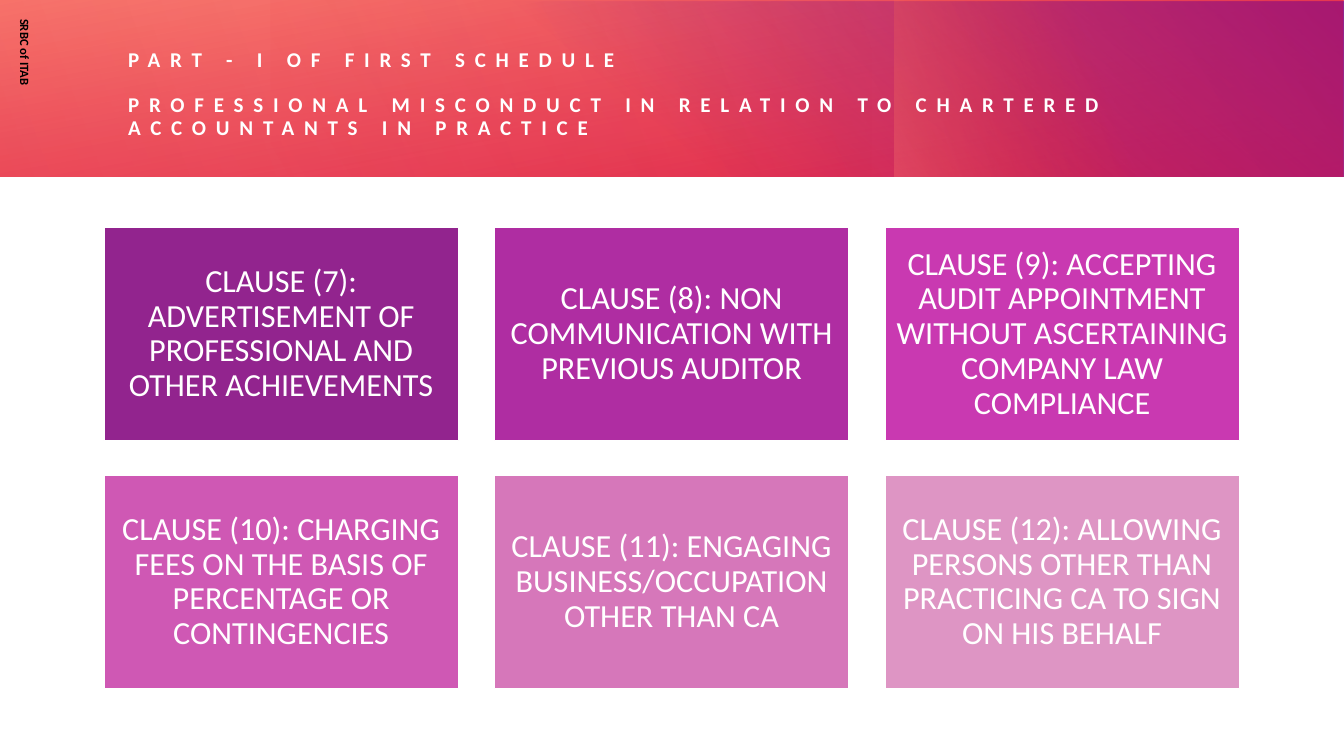
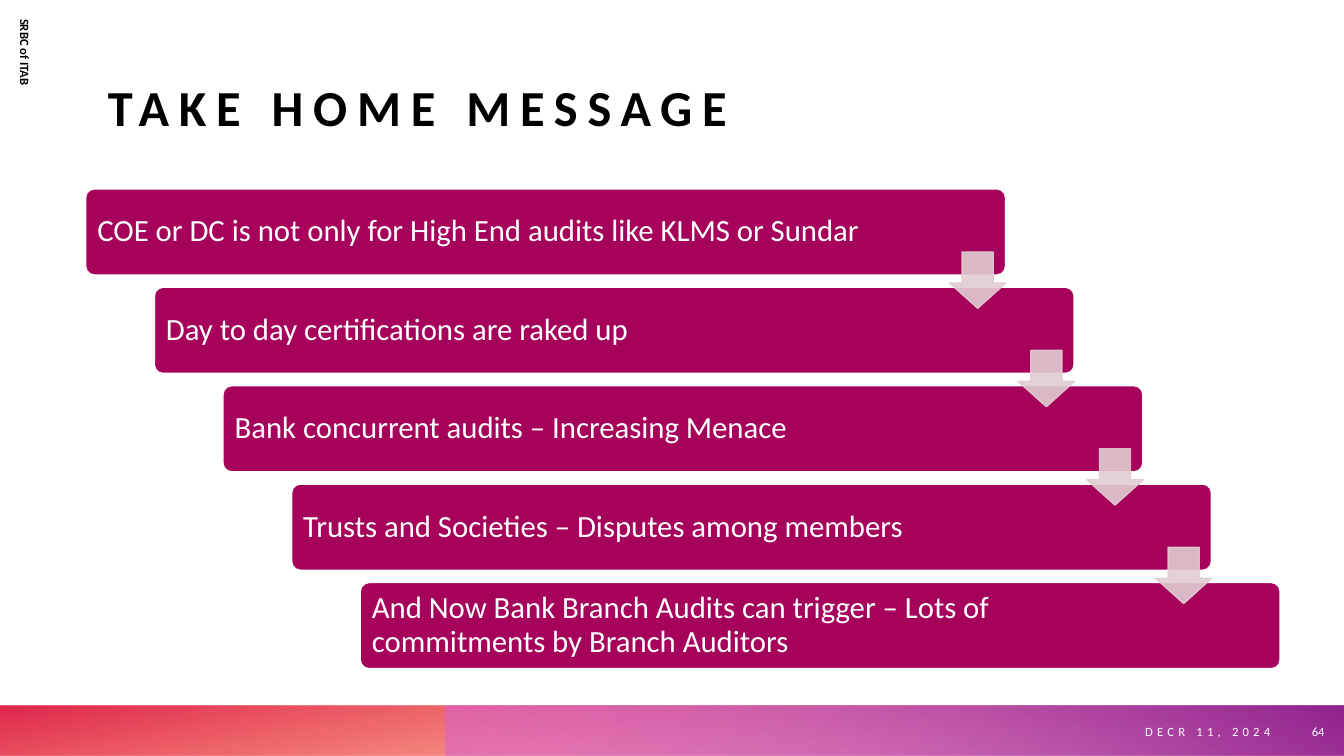
import pptx
import pptx.util
import pptx.dml.color
import pptx.enum.shapes
import pptx.enum.text
import pptx.oxml
import pptx.oxml.ns
import lxml.etree

Cm = pptx.util.Cm
Pt = pptx.util.Pt
qn = pptx.oxml.ns.qn
SHAPE = pptx.enum.shapes.MSO_SHAPE
ALIGN = pptx.enum.text.PP_ALIGN
ANCHOR = pptx.enum.text.MSO_ANCHOR

FONT = "Calibri"
C = {
    "white": "FFFFFF", "black": "000000", "red": "DA002F", "orange": "FE4A00",
    "salmon": "FF907A", "orchid": "D861D4", "purple": "92248E",
    "bar": "A6025C", "arrow": "E1CCD2",
}
WIDTH, HEIGHT = 33.87, 19.05

SIDE_LABEL = "SRBC of ITAB"
CLAUSE_TITLE = [
    "PART - I OF FIRST SCHEDULE",
    "PROFESSIONAL MISCONDUCT IN RELATION TO CHARTERED ACCOUNTANTS IN PRACTICE",
]
CLAUSES = [
    ("CLAUSE (7): ADVERTISEMENT OF PROFESSIONAL AND OTHER ACHIEVEMENTS", "92248E"),
    ("CLAUSE (8): NON COMMUNICATION WITH PREVIOUS AUDITOR", "AF2DA2"),
    ("CLAUSE (9): ACCEPTING AUDIT APPOINTMENT WITHOUT ASCERTAINING COMPANY LAW COMPLIANCE", "C939B1"),
    ("CLAUSE (10): CHARGING FEES ON THE BASIS OF PERCENTAGE OR CONTINGENCIES", "CF58B4"),
    ("CLAUSE (11): ENGAGING BUSINESS/OCCUPATION OTHER THAN CA", "D677BA"),
    ("CLAUSE (12): ALLOWING PERSONS OTHER THAN PRACTICING CA TO SIGN ON HIS BEHALF", "DE95C4"),
]
MESSAGE_TITLE = "TAKE HOME MESSAGE"
MESSAGES = [
    "COE or DC is not only for High End audits like KLMS or Sundar",
    "Day to day certifications are raked up",
    "Bank concurrent audits – Increasing Menace",
    "Trusts and Societies – Disputes among members",
    "And Now Bank Branch Audits can trigger – Lots of commitments by Branch Auditors",
]
DATE, PAGE = "DECR 11, 2024", "64"

HEADER_BANDS = [
    ((0, 0, WIDTH, 4.44), 260, [(0, "red", 83), (100, "salmon", 100)]),
    ((12.22, 0.03, 21.65, 4.42), 310, [(22, "purple", 0), (99, "purple", 100)]),
    ((22.54, 0, 9.5, 4.45), 160, [(45, "orange", 0), (99, "salmon", 33)]),
    ((6.81, 0, 27.03, 4.45), 150, [(0, "red", 30), (99, "red", 0)]),
    ((0, 0, 21.97, 4.45), 340, [(0, "red", 21), (99, "red", 0)]),
]
FOOTER_BANDS = [
    ((0, 17.78, WIDTH, 1.27), 260, [(14, "orange", 28), (100, "red", 85)]),
    ((11.23, 17.78, 22.64, 1.27), 300, [(9, "orchid", 55), (99, "purple", 100)]),
]


def rgb(value):
    return pptx.dml.color.RGBColor.from_string(value)


def write(sp, text, size=9, color="white", bold=False, align=ALIGN.LEFT,
          anchor=ANCHOR.MIDDLE, insets=(0.25, 0.13, 0.25, 0.13),
          line=1.0, gap=0, tracking=0):
    tf = sp.text_frame
    tf.word_wrap = True
    tf.vertical_anchor = anchor
    tf.margin_left, tf.margin_top, tf.margin_right, tf.margin_bottom = map(Cm, insets)
    for i, content in enumerate([text] if isinstance(text, str) else text):
        p = tf.add_paragraph() if i else tf.paragraphs[0]
        p.alignment = align
        p.line_spacing = line
        p.space_before = Pt(gap if i else 0)
        r = p.add_run()
        r.text = content
        r.font.name = FONT
        r.font.size = Pt(size)
        r.font.bold = bold
        r.font.color.rgb = rgb(C[color])
    if tracking:
        for props in sp.element.iter(qn("a:rPr")):
            props.set("spc", str(tracking * 100))


def add_text(s, box, text, **fmt):
    sp = s.shapes.add_textbox(*map(Cm, box))
    write(sp, text, **fmt)
    return sp


def add_block(s, kind, box, fill, outline="FFFFFF"):
    sp = s.shapes.add_shape(kind, *map(Cm, box))
    sp.shadow.inherit = False
    sp.fill.solid()
    sp.fill.fore_color.rgb = rgb(fill)
    sp.line.color.rgb = rgb(outline)
    sp.line.width = Pt(1)
    return sp


def add_band(s, box, angle, stops):
    sp = s.shapes.add_shape(SHAPE.RECTANGLE, *map(Cm, box))
    sp.shadow.inherit = False
    sp.line.fill.background()
    sp.fill.background()
    grad = lxml.etree.Element(qn("a:gradFill"), rotWithShape="1")
    stop_list = lxml.etree.SubElement(grad, qn("a:gsLst"))
    for pos, color, alpha in stops:
        gs = lxml.etree.SubElement(stop_list, qn("a:gs"), pos=str(pos * 1000))
        clr = lxml.etree.SubElement(gs, qn("a:srgbClr"), val=C[color])
        lxml.etree.SubElement(clr, qn("a:alpha"), val=str(alpha * 1000))
    lxml.etree.SubElement(grad, qn("a:lin"), ang=str(angle * 60000), scaled="0")
    props = sp.element.spPr
    props.replace(props.find(qn("a:noFill")), grad)


def add_title(s, box, text, **fmt):
    add_text(s, box, text, bold=True, tracking=7, insets=(0, 0, 0, 0), **fmt)


def add_side_label(s):
    add_text(s, (-5.08, 5.31, 11.43, 1.27), SIDE_LABEL,
             color="black", bold=True).rotation = 90


def clause_slide(s):
    for band in HEADER_BANDS:
        add_band(s, *band)
    add_title(s, (3.23, 1.04, 28.83, 2.69), CLAUSE_TITLE, size=15, line=0.9, gap=16)
    for i, (text, fill) in enumerate(CLAUSES):
        row, col = divmod(i, 3)
        box = (2.62 + col * 9.84, 5.74 + row * 6.25, 8.94, 5.36)
        card = add_block(s, SHAPE.RECTANGLE, box, fill)
        write(card, text, size=23, align=ALIGN.CENTER, line=0.9,
              insets=(0.25, 0.25, 0.25, 0.25))
    add_side_label(s)


def message_slide(s):
    for band in FOOTER_BANDS:
        add_band(s, *band)
    add_title(s, (2.72, 1.12, 28.45, 2.31), MESSAGE_TITLE, size=36,
              color="black", anchor=ANCHOR.BOTTOM)
    corners = [(2.16 + i * 1.73, 4.76 + i * 2.48) for i in range(len(MESSAGES))]
    for (x, y), text in zip(corners, MESSAGES):
        bar = add_block(s, SHAPE.ROUNDED_RECTANGLE, (x, y, 23.18, 2.17), C["bar"])
        bar.adjustments[0] = 0.1
        write(bar, text, size=22, line=0.9, insets=(0.23, 0.2, 3.3, 0.2))
    for x, y in corners[:-1]:
        arrow = add_block(s, SHAPE.DOWN_ARROW, (x + 21.77, y + 1.59, 1.42, 1.42),
                          C["arrow"], C["arrow"])
        arrow.adjustments[0], arrow.adjustments[1] = 0.55, 0.45
        for clr in arrow.element.spPr.iter(qn("a:srgbClr")):
            lxml.etree.SubElement(clr, qn("a:alpha"), val="90000")
    add_text(s, (21.97, 17.81, 10.29, 1.24), DATE, align=ALIGN.RIGHT, tracking=3)
    add_side_label(s)
    add_text(s, (32.41, 17.81, 1.22, 1.24), PAGE, align=ALIGN.RIGHT)


def main():
    prs = pptx.Presentation()
    prs.slide_width, prs.slide_height = Cm(WIDTH), Cm(HEIGHT)
    for build in (clause_slide, message_slide):
        build(prs.slides.add_slide(prs.slide_layouts[6]))
    prs.save("out.pptx")


if __name__ == "__main__":
    main()
